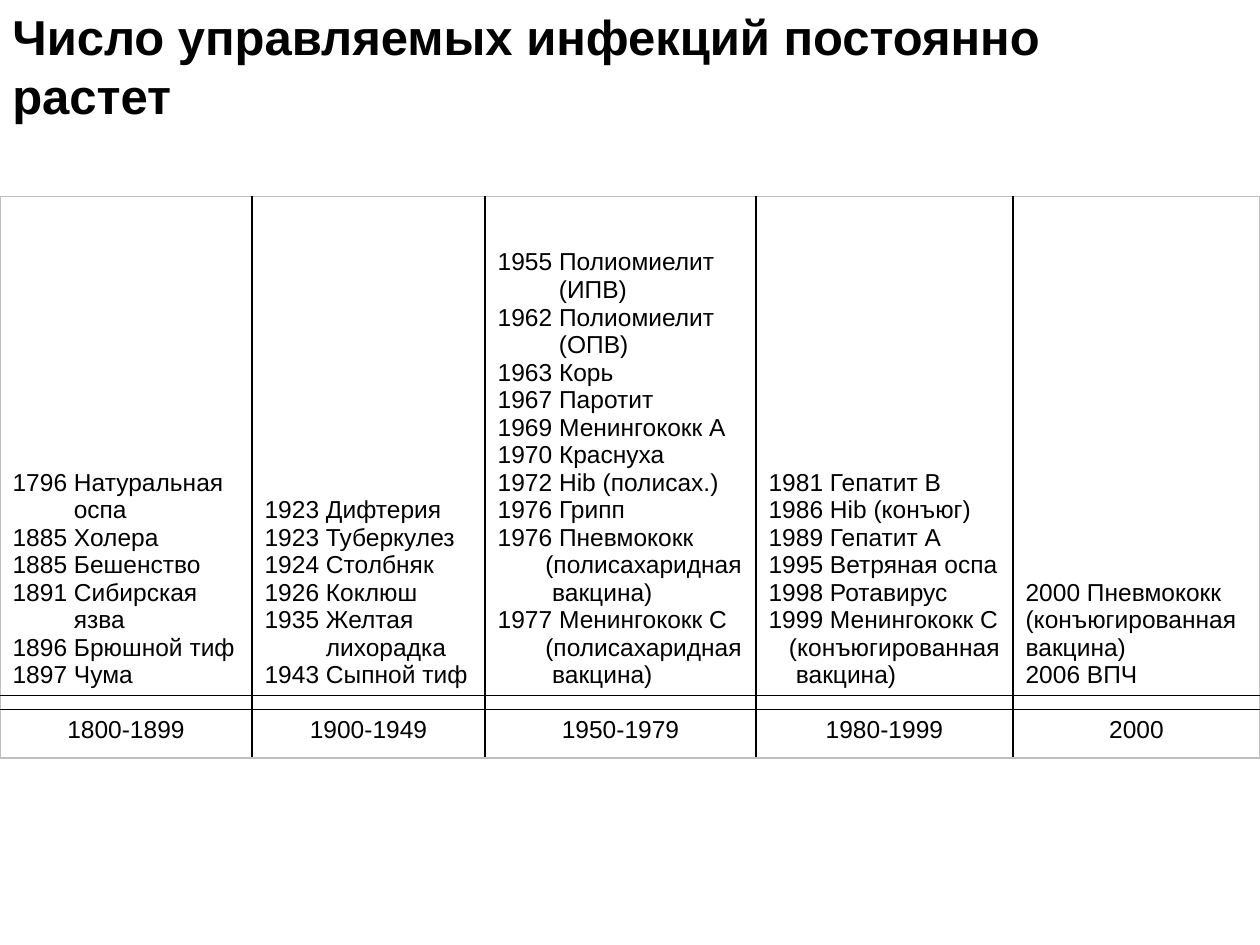
from lxml.etree import SubElement as Sub
from pptx import Presentation
from pptx.dml.color import RGBColor
from pptx.enum.text import MSO_ANCHOR as Anchor, PP_ALIGN as Align
from pptx.oxml import parse_xml
from pptx.oxml.ns import nsdecls, qn
from pptx.util import Inches, Pt

BLACK = RGBColor(0, 0, 0)
WHITE = RGBColor(255, 255, 255)
GREY = RGBColor(0xBF, 0xBF, 0xBF)
FONT = "Arial"
SPACE = 0.054

SHARES = [0.2, 0.185, 0.215, 0.204, 0.196]
ROWS = [0.528, 0.015, 0.051]
ERAS = {
    "1800-1899": [
        (0, "1796 Натуральная"), (9, "оспа"), (0, "1885 Холера"),
        (0, "1885 Бешенство"), (0, "1891 Сибирская"), (9, "язва"),
        (0, "1896 Брюшной тиф"), (0, "1897 Чума")],
    "1900-1949": [
        (0, "1923 Дифтерия"), (0, "1923 Туберкулез"), (0, "1924 Столбняк"),
        (0, "1926 Коклюш"), (0, "1935 Желтая"), (9, "лихорадка"),
        (0, "1943 Сыпной тиф")],
    "1950-1979": [
        (0, "1955 Полиомиелит"), (9, "(ИПВ)"), (0, "1962 Полиомиелит"),
        (9, "(ОПВ)"), (0, "1963 Корь"), (0, "1967 Паротит"),
        (0, "1969 Менингококк А"), (0, "1970 Краснуха"),
        (0, "1972 Hib (полисах.)"), (0, "1976 Грипп"),
        (0, "1976 Пневмококк"), (7, "(полисахаридная"), (8, "вакцина)"),
        (0, "1977 Менингококк С"), (7, "(полисахаридная"), (8, "вакцина)")],
    "1980-1999": [
        (0, "1981 Гепатит В"), (0, "1986 Hib (конъюг)"),
        (0, "1989 Гепатит А"), (0, "1995 Ветряная оспа"),
        (0, "1998 Ротавирус"), (0, "1999 Менингококк С"),
        (3, "(конъюгированная"), (4, "вакцина)")],
    "2000": [
        (0, "2000 Пневмококк (конъюгированная вакцина)"), (0, "2006 ВПЧ")],
}


def write(frame, lines, size=14, bold=False, align=Align.LEFT):
    """Fill a text frame with (indent in spaces, text) lines."""
    for i, (pad, text) in enumerate(lines):
        para = frame.add_paragraph() if i else frame.paragraphs[0]
        para.alignment = align
        if pad:
            para._p.get_or_add_pPr().set("marL", str(Inches(pad * SPACE)))
        run = para.add_run()
        run.text = text
        font = run.font
        font.name, font.size, font.bold = FONT, Pt(size), bold
        font.color.rgb = BLACK


def edge(cell, sides):
    """Draw the cell borders, given a colour for each side."""
    props = cell._tc.get_or_add_tcPr()
    for i, (side, tint) in enumerate(sides.items()):
        props.insert(i, parse_xml(
            f'<a:ln{side} {nsdecls("a")} w="{Pt(1)}"><a:solidFill>'
            f'<a:srgbClr val="{tint}"/></a:solidFill></a:ln{side}>'))


def title(slide, box, text):
    """Place the bold heading in its box."""
    frame = slide.shapes.add_textbox(*box).text_frame
    frame.word_wrap = True
    frame.vertical_anchor = Anchor.MIDDLE
    write(frame, [(0, text)], size=28, bold=True)


def grid(slide, box, tall):
    """Place the table of eras in its box, with rows as shares of the slide."""
    count = len(ERAS)
    table = slide.shapes.add_table(len(ROWS), count, *box).table
    table.first_row = table.horz_banding = False
    for row, share in zip(table.rows, ROWS):
        row.height = int(tall * share)
    for c, (era, lines) in enumerate(ERAS.items()):
        table.columns[c].width = int(box[2] * SHARES[c])
        for r in range(len(ROWS)):
            cell = table.cell(r, c)
            cell.fill.solid()
            cell.fill.fore_color.rgb = WHITE
            edge(cell, {
                "L": BLACK if c else GREY,
                "R": BLACK if c < count - 1 else GREY,
                "T": BLACK if r else GREY,
                "B": BLACK if r < len(ROWS) - 1 else GREY})
        top, gap, foot = (table.cell(r, c) for r in range(len(ROWS)))
        top.vertical_anchor = Anchor.BOTTOM
        write(top.text_frame, lines)
        gap.margin_top = gap.margin_bottom = 0
        Sub(gap.text_frame.paragraphs[0]._p, qn("a:endParaRPr"), sz="400")
        write(foot.text_frame, [(0, era)], align=Align.CENTER)


def main():
    """Build the slide and save it."""
    deck = Presentation()
    wide, tall = deck.slide_width, deck.slide_height = Inches(10), Inches(7.5)
    slide = deck.slides.add_slide(deck.slide_layouts[6])
    title(slide, (0, int(tall * 0.004), int(wide * 0.946), int(tall * 0.13)),
          "Число управляемых инфекций постоянно растет")
    grid(slide, (0, int(tall * 0.208), wide, int(tall * sum(ROWS))), tall)
    deck.save("out.pptx")


if __name__ == "__main__":
    main()
